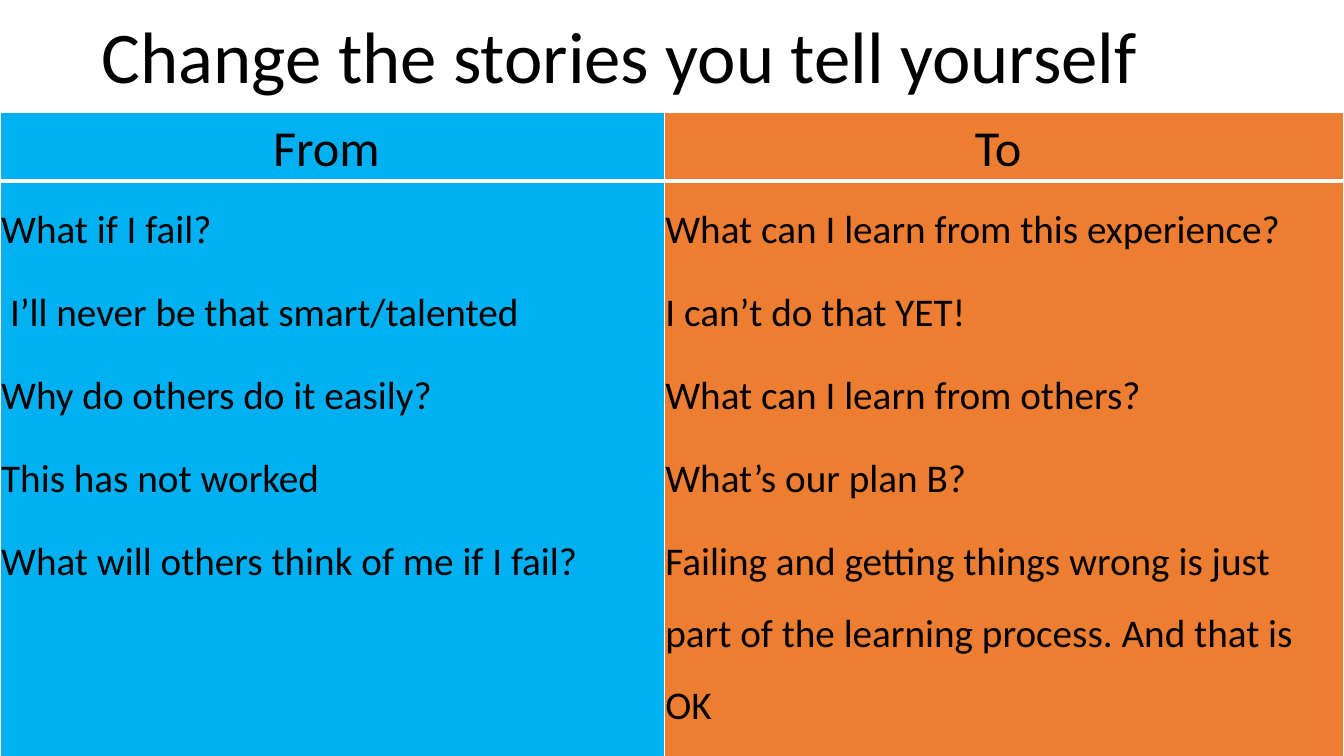
"""Build a slide that contrasts fixed-mindset stories with growth-mindset ones."""
from dataclasses import dataclass

import pptx
import pptx.dml.color
import pptx.enum.text
import pptx.oxml
import pptx.oxml.ns
import pptx.util

Cm = pptx.util.Cm
Pt = pptx.util.Pt
PP_ALIGN = pptx.enum.text.PP_ALIGN
COLORS = {"text": "000000", "from": "00B0F0", "to": "ED7D31", "border": "FFFFFF"}
FONT = "Calibri"
ROW_HEIGHTS = (1.6, 14.61)


@dataclass
class Column:
    heading: str
    fill: str
    width: float
    stories: list[str]


COLUMNS = [
    Column("From ", "from", 16.74, [
        "What if I fail? ",
        " I’ll never be that smart/talented ",
        "Why do others do it easily? ",
        "This has not worked",
        "What will others think of me if I fail? ",
    ]),
    Column("To ", "to", 17.12, [
        "What can I learn from this experience? ",
        "I can’t do that YET! ",
        "What can I learn from others? ",
        "What’s our plan B? ",
        "Failing and getting things wrong is just part of the learning process. And that is OK ",
    ]),
]


def rgb(name: str) -> pptx.dml.color.RGBColor:
    """Return a named colour."""
    return pptx.dml.color.RGBColor.from_string(COLORS[name])


def format_text(tf, size: float, align, spacing: float, after: float) -> None:
    """Format every paragraph and run of a text frame."""
    for p in tf.paragraphs:
        p.alignment = align
        p.line_spacing = spacing
        p.space_after = Pt(after)
        for r in p.runs:
            r.font.name = FONT
            r.font.size = Pt(size)
            r.font.bold = False
            r.font.color.rgb = rgb("text")


def add_borders(cell, top: float, bottom: float) -> None:
    """Draw the four cell borders, with the top and bottom widths in points."""
    for side, width in (("L", 1), ("R", 1), ("T", top), ("B", bottom)):
        cell._tc.get_or_add_tcPr().append(pptx.oxml.parse_xml(
            f'<a:ln{side} {pptx.oxml.ns.nsdecls("a")} w="{Pt(width)}"><a:solidFill>'
            f'<a:srgbClr val="{COLORS["border"]}"/></a:solidFill></a:ln{side}>'))


def fill_cell(cell, text: str, fill: str, size: float, align, spacing: float,
              top: float, bottom: float) -> None:
    """Write and style one table cell."""
    add_borders(cell, top, bottom)
    cell.fill.solid()
    cell.fill.fore_color.rgb = rgb(fill)
    cell.margin_left = cell.margin_right = Cm(0.03)
    cell.margin_top = cell.margin_bottom = Cm(0.03)
    cell.text_frame.text = text
    format_text(cell.text_frame, size, align, spacing, 8)


def add_title(s) -> None:
    """Place and format the slide title."""
    sp = s.shapes.title
    sp.left, sp.top, sp.width, sp.height = Cm(2.31), Cm(-0.58), Cm(29.21), Cm(4.19)
    tf = sp.text_frame
    tf.text = "Change the stories you tell yourself"
    tf.vertical_anchor = pptx.enum.text.MSO_ANCHOR.MIDDLE
    format_text(tf, 52, PP_ALIGN.LEFT, 0.9, 0)


def add_stories(s) -> None:
    """Add the two-column table of stories."""
    width = sum(c.width for c in COLUMNS)
    table = s.shapes.add_table(2, len(COLUMNS), 0, Cm(2.84), Cm(width),
                               Cm(sum(ROW_HEIGHTS))).table
    table.first_row = table.horz_banding = False
    for row, height in zip(table.rows, ROW_HEIGHTS):
        row.height = Cm(height)
    for i, column in enumerate(COLUMNS):
        table.columns[i].width = Cm(column.width)
        fill_cell(table.cell(0, i), column.heading, column.fill, 36,
                  PP_ALIGN.CENTER, 1.07, 1, 3)
        fill_cell(table.cell(1, i), "\n".join(column.stories), column.fill, 28,
                  PP_ALIGN.LEFT, 1.5, 3, 1)


def main() -> None:
    """Build and save the presentation."""
    prs = pptx.Presentation()
    prs.slide_width, prs.slide_height = Cm(33.87), Cm(19.05)
    s = prs.slides.add_slide(prs.slide_layouts[5])
    add_title(s)
    add_stories(s)
    prs.save("out.pptx")


if __name__ == "__main__":
    main()
